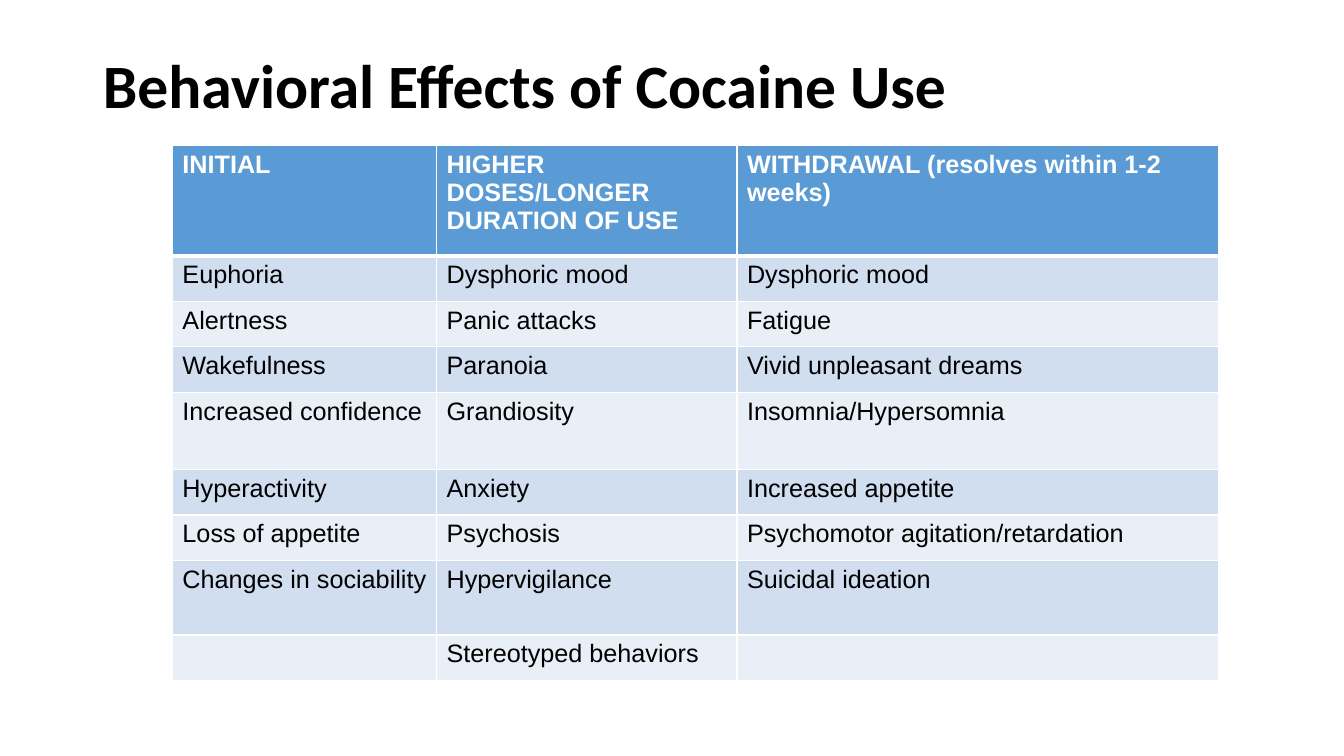
import lxml.etree
import pptx
import pptx.dml.color
import pptx.enum.text
import pptx.oxml.ns
import pptx.util

Inches = pptx.util.Inches
RGBColor = pptx.dml.color.RGBColor

BLACK = RGBColor(0x00, 0x00, 0x00)
WHITE = RGBColor(0xFF, 0xFF, 0xFF)
HEADER_BLUE = RGBColor(0x5B, 0x9B, 0xD5)
BAND_DARK = RGBColor(0xD0, 0xDE, 0xEF)
BAND_LIGHT = RGBColor(0xE9, 0xEF, 0xF7)

COLUMN_WIDTHS = [2.62, 2.98, 4.78]
ROW_HEIGHTS = [1.1, 0.45, 0.45, 0.45, 0.77, 0.45, 0.45, 0.74, 0.45]
EFFECTS = [
    ("INITIAL", "HIGHER DOSES/LONGER DURATION OF USE", "WITHDRAWAL (resolves within 1-2 weeks)"),
    ("Euphoria", "Dysphoric mood", "Dysphoric mood"),
    ("Alertness", "Panic attacks", "Fatigue"),
    ("Wakefulness", "Paranoia", "Vivid unpleasant dreams"),
    ("Increased confidence", "Grandiosity", "Insomnia/Hypersomnia"),
    ("Hyperactivity", "Anxiety", "Increased appetite"),
    ("Loss of appetite", "Psychosis", "Psychomotor agitation/retardation"),
    ("Changes in sociability", "Hypervigilance", "Suicidal ideation"),
    ("", "Stereotyped behaviors", ""),
]


def format_runs(paragraph, font_name, size, color, bold):
    for run in paragraph.runs:
        run.font.name = font_name
        run.font.size = pptx.util.Pt(size)
        run.font.color.rgb = color
        run.font.bold = bold


def set_borders(cell, top, bottom):
    """Draw white cell borders, with widths in points."""
    properties = cell._tc.get_or_add_tcPr()
    widths = {"lnL": 1, "lnR": 1, "lnT": top, "lnB": bottom}
    for position, (side, width) in enumerate(widths.items()):
        line = lxml.etree.Element(pptx.oxml.ns.qn("a:" + side), w=str(pptx.util.Pt(width)))
        fill = lxml.etree.SubElement(line, pptx.oxml.ns.qn("a:solidFill"))
        lxml.etree.SubElement(fill, pptx.oxml.ns.qn("a:srgbClr"), val=str(WHITE))
        properties.insert(position, line)


def place_title(slide, left, top, width, height):
    title = slide.shapes.title
    title.left, title.top = Inches(left), Inches(top)
    title.width, title.height = Inches(width), Inches(height)
    text_frame = title.text_frame
    text_frame.text = "Behavioral Effects of Cocaine Use"
    text_frame.word_wrap = True
    text_frame.vertical_anchor = pptx.enum.text.MSO_ANCHOR.MIDDLE
    paragraph = text_frame.paragraphs[0]
    paragraph.alignment = pptx.enum.text.PP_ALIGN.LEFT
    paragraph.line_spacing = 0.9
    format_runs(paragraph, "Calibri", 44, BLACK, True)


def place_effects_table(slide, left, top, width, height):
    table = slide.shapes.add_table(
        len(EFFECTS), len(COLUMN_WIDTHS),
        Inches(left), Inches(top), Inches(width), Inches(height)).table
    for column, share in zip(table.columns, COLUMN_WIDTHS):
        column.width = Inches(width * share / sum(COLUMN_WIDTHS))
    for row, share in zip(table.rows, ROW_HEIGHTS):
        row.height = Inches(height * share / sum(ROW_HEIGHTS))

    for row_index, effects in enumerate(EFFECTS):
        is_header = row_index == 0
        band = BAND_DARK if row_index % 2 else BAND_LIGHT
        for column_index, effect in enumerate(effects):
            cell = table.cell(row_index, column_index)
            cell.fill.solid()
            cell.fill.fore_color.rgb = HEADER_BLUE if is_header else band
            # The rule under the header is shared with the first effects row
            set_borders(cell, top=3 if row_index == 1 else 1, bottom=3 if is_header else 1)
            cell.text_frame.text = effect
            format_runs(cell.text_frame.paragraphs[0], "Arial", 18,
                        WHITE if is_header else BLACK, is_header)


def main():
    presentation = pptx.Presentation()
    presentation.slide_width = Inches(13.33)
    presentation.slide_height = Inches(7.5)
    slide = presentation.slides.add_slide(presentation.slide_layouts[5])

    # Title
    place_title(slide, 0.92, 0.15, 12.97, 1.45)
    # Table of effects by stage of use
    place_effects_table(slide, 1.71, 1.44, sum(COLUMN_WIDTHS), sum(ROW_HEIGHTS))

    presentation.save("out.pptx")


if __name__ == "__main__":
    main()
